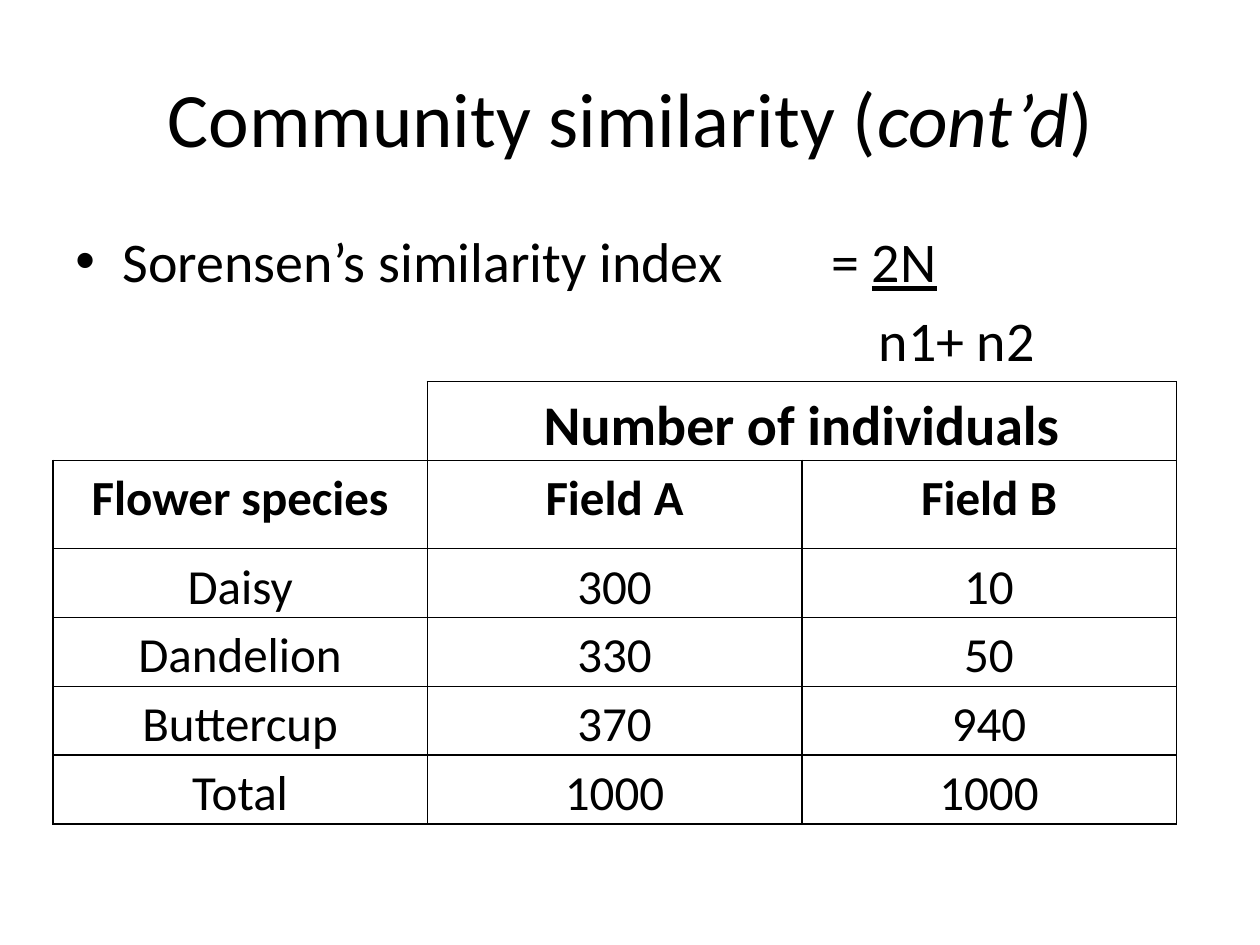
from dataclasses import dataclass

from lxml.etree import SubElement
from pptx import Presentation
from pptx.dml.color import RGBColor
from pptx.enum.text import MSO_ANCHOR, PP_ALIGN
from pptx.oxml.ns import qn
from pptx.util import Pt


@dataclass(frozen=True)
class Theme:
    font: str = "Calibri"
    ink: str = "000000"
    title: int = 44
    body: int = 32
    cell: int = 28
    rule: float = 1


@dataclass(frozen=True)
class Box:
    left: float
    top: float
    width: float
    height: float

    def spans(self) -> list:
        return [Pt(v) for v in (self.left, self.top, self.width, self.height)]


@dataclass(frozen=True)
class Row:
    height: float
    size: int
    bold: bool
    texts: tuple


THEME = Theme()
TITLE = Box(36, 21.6, 648, 90)
INDEX = Box(36, 126, 400, 96)
RATIO = Box(468, 126, 180, 96)
GRID = Box(30.2, 218, 642, 253)
HANG = 27
BAR_END = 125

ROWS = [
    Row(45, THEME.body, True, ("", "Number of individuals", "")),
    Row(50.4, THEME.cell, True, ("Flower species", "Field A", "Field B")),
] + [
    Row(39.4, THEME.cell, False, texts)
    for texts in (
        ("Daisy", "300", "10"),
        ("Dandelion", "330", "50"),
        ("Buttercup", "370", "940"),
        ("Total", "1000", "1000"),
    )
]


def style(para, size: int, bold: bool = False) -> None:
    font = para.font
    font.name, font.size, font.bold = THEME.font, Pt(size), bold
    font.color.rgb = RGBColor.from_string(THEME.ink)


def add_runs(para, *texts: str) -> list:
    runs = []
    for text in texts:
        run = para.add_run()
        run.text = text
        runs.append(run)
    return runs


def add_box(slide, box: Box):
    frame = slide.shapes.add_textbox(*box.spans()).text_frame
    frame.word_wrap = True
    return frame


def body_line(para) -> None:
    style(para, THEME.body)
    para.space_before = Pt(THEME.body * 0.2)


def draw_title(slide) -> None:
    title = slide.shapes.title
    title.left, title.top, title.width, title.height = TITLE.spans()
    frame = title.text_frame
    frame.vertical_anchor = MSO_ANCHOR.MIDDLE
    para = frame.paragraphs[0]
    para.alignment = PP_ALIGN.CENTER
    style(para, THEME.title)
    runs = add_runs(para, "Community similarity (", "cont’d", ")")
    runs[1].font.italic = True


def draw_index(slide) -> None:
    para = add_box(slide, INDEX).paragraphs[0]
    body_line(para)
    add_runs(para, "Sorensen’s similarity index")
    props = para._p.get_or_add_pPr()
    props.set("marL", str(Pt(HANG)))
    props.set("indent", str(-Pt(HANG)))
    SubElement(props, qn("a:buFont")).set("typeface", "Arial")
    SubElement(props, qn("a:buChar")).set("char", "•")


def draw_ratio(slide) -> None:
    frame = add_box(slide, RATIO)
    # The underlined tab carries the fraction bar to its stop
    top = frame.paragraphs[0]
    body_line(top)
    add_runs(top, "= ", "2N\t")[1].font.underline = True
    stops = SubElement(top._p.get_or_add_pPr(), qn("a:tabLst"))
    stop = SubElement(stops, qn("a:tab"))
    stop.set("pos", str(Pt(BAR_END)))
    stop.set("algn", "l")
    low = frame.add_paragraph()
    body_line(low)
    add_runs(low, "n1+ n2")
    low._p.get_or_add_pPr().set("marL", str(Pt(HANG)))


def set_edges(cell, shown: str) -> None:
    props = cell._tc.get_or_add_tcPr()
    for spot, side in enumerate("LRTB"):
        line = SubElement(props, qn(f"a:ln{side}"))
        line.set("w", str(Pt(THEME.rule)))
        if side in shown:
            fill = SubElement(line, qn("a:solidFill"))
            SubElement(fill, qn("a:srgbClr")).set("val", THEME.ink)
        else:
            SubElement(line, qn("a:noFill"))
        props.insert(spot, line)


def fill_cell(cell, text: str, row: Row) -> None:
    cell.fill.background()
    cell.margin_left = cell.margin_right = Pt(2.2)
    cell.margin_top = cell.margin_bottom = 0
    cell.vertical_anchor = MSO_ANCHOR.TOP
    para = cell.text_frame.paragraphs[0]
    para.alignment = PP_ALIGN.CENTER
    para.line_spacing, para.space_after = 1.15, Pt(10)
    style(para, row.size, row.bold)
    if text:
        add_runs(para, text)


def draw_table(slide) -> None:
    count = len(ROWS[0].texts)
    table = slide.shapes.add_table(len(ROWS), count, *GRID.spans()).table
    table.first_row = table.horz_banding = False
    for col in table.columns:
        col.width = Pt(GRID.width / count)
    for r, row in enumerate(ROWS):
        table.rows[r].height = Pt(row.height)
        for c, text in enumerate(row.texts):
            cell = table.cell(r, c)
            fill_cell(cell, text, row)
            set_edges(cell, "RB" if r == c == 0 else "LRTB")
    table.cell(0, 1).merge(table.cell(0, 2))


def main() -> None:
    deck = Presentation()
    deck.slide_width, deck.slide_height = Pt(720), Pt(540)
    slide = deck.slides.add_slide(deck.slide_layouts[5])
    draw_title(slide)
    # Similarity index and its fraction
    draw_index(slide)
    draw_ratio(slide)
    # Counts by species and field
    draw_table(slide)
    deck.save("out.pptx")


if __name__ == "__main__":
    main()
